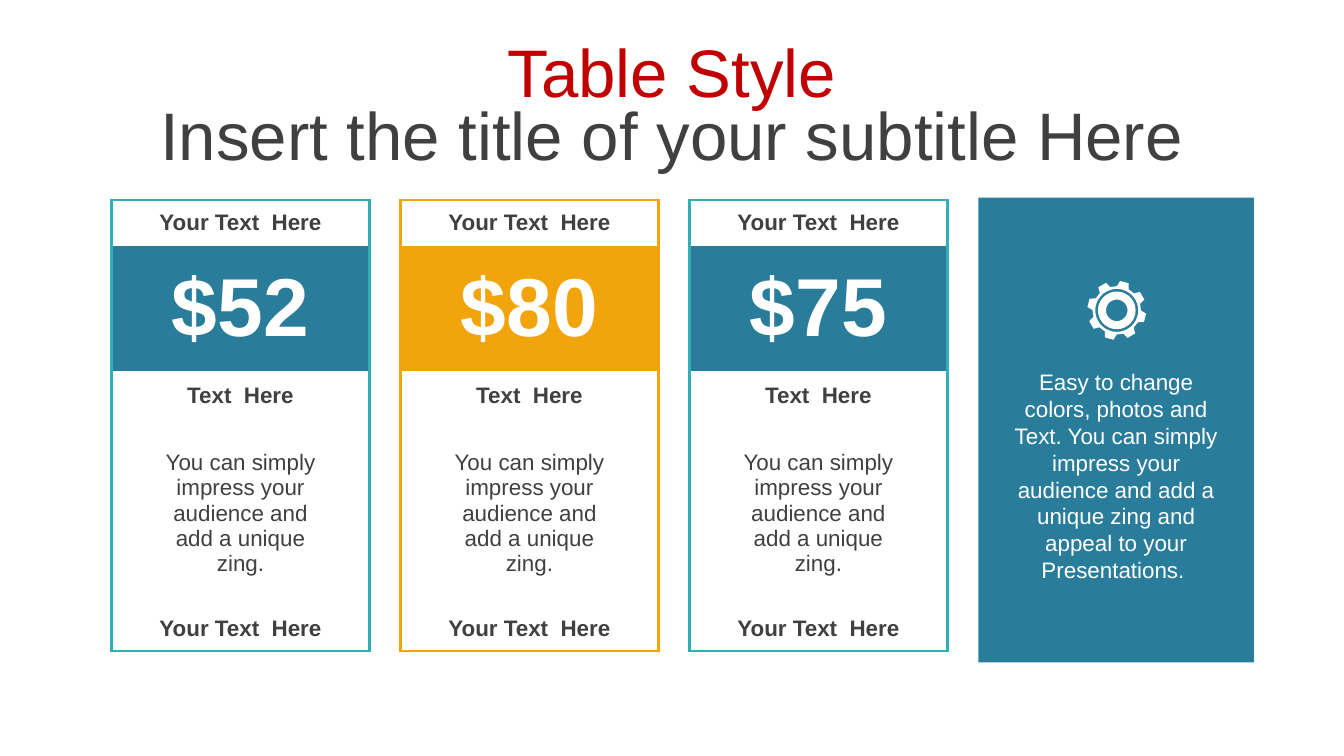
from dataclasses import dataclass
from math import cos, radians, sin

from lxml.etree import SubElement
from pptx import Presentation
from pptx.dml.color import RGBColor
from pptx.enum.shapes import MSO_SHAPE
from pptx.enum.text import MSO_ANCHOR, MSO_AUTO_SIZE, PP_ALIGN
from pptx.oxml.ns import qn
from pptx.util import Inches, Pt

COLORS = {
    "red": "C00000",
    "text": "404040",
    "teal": "32AEB8",
    "blue": "297D9B",
    "orange": "F2A40D",
    "white": "FFFFFF",
}
FONT = "Arial"
COLUMN_WIDTHS = (0.25, 1.42, 0.25)
ROW_HEIGHTS = (0.34, 0.93, 0.34, 0.34, 0.34, 0.63, 0.34)
FULL_WIDTH_ROWS = (0, 1, 6)
BORDER_WIDTH = Pt(1.5)
EMPTY_CELL_SIZE = 17.5
TABLE_TOP, TABLE_HEIGHT = 1.49, 3.44
TABLE_LEFT, TABLE_STEP = 0.83, 2.15


@dataclass
class PriceCard:
    price: str
    band: str
    border: str


@dataclass
class CellText:
    row: int
    column: int
    text: str
    size: int = 12
    bold: bool = True
    color: str = "text"


CARDS = [
    PriceCard("$52", "blue", "teal"),
    PriceCard("$80", "orange", "orange"),
    PriceCard("$75", "blue", "teal"),
]


def rgb(name: str) -> RGBColor:
    return RGBColor.from_string(COLORS[name])


def format_paragraph(paragraph, size: int, color: str, bold: bool = False) -> None:
    paragraph.alignment = PP_ALIGN.CENTER
    paragraph.font.name = FONT
    paragraph.font.size = Pt(size)
    paragraph.font.bold = bold
    paragraph.font.color.rgb = rgb(color)


def fill_heading(placeholder, text: str, top: float, height: float, color: str) -> None:
    placeholder.left, placeholder.top = Inches(0), Inches(top)
    placeholder.width, placeholder.height = Inches(10), Inches(height)
    frame = placeholder.text_frame
    frame.text = text
    frame.auto_size = MSO_AUTO_SIZE.NONE
    frame.vertical_anchor = MSO_ANCHOR.MIDDLE
    paragraph = frame.paragraphs[0]
    format_paragraph(paragraph, 36, color)
    paragraph.space_before = Pt(7.2)
    properties = paragraph._p.get_or_add_pPr()
    properties.set("marL", "0")
    properties.set("indent", "0")
    bullet = SubElement(properties, qn("a:buNone"))
    properties.find(qn("a:defRPr")).addprevious(bullet)


def set_borders(cell, row: int, column: int, color: str) -> None:
    """Draw only the edges that lie on the outside of the card."""
    edges = {
        "a:lnL": column == 0,
        "a:lnR": column == 2 or row in FULL_WIDTH_ROWS,
        "a:lnT": row == 0,
        "a:lnB": row == len(ROW_HEIGHTS) - 1,
    }
    properties = cell._tc.get_or_add_tcPr()
    for tag, visible in edges.items():
        line = SubElement(properties, qn(tag), w=str(BORDER_WIDTH if visible else 0))
        if visible:
            fill = SubElement(line, qn("a:solidFill"))
            SubElement(fill, qn("a:srgbClr"), val=COLORS[color])
        else:
            SubElement(line, qn("a:noFill"))


def set_empty_line_font(cell) -> None:
    """Size the empty line, which decides how far the row grows."""
    paragraph = cell.text_frame.paragraphs[0]
    end = SubElement(paragraph._p, qn("a:endParaRPr"), sz=str(int(EMPTY_CELL_SIZE * 100)))
    SubElement(end, qn("a:latin"), typeface=FONT)


def add_card(slide, card: PriceCard, left: float) -> None:
    table = slide.shapes.add_table(
        len(ROW_HEIGHTS), len(COLUMN_WIDTHS), Inches(left), Inches(TABLE_TOP),
        Inches(sum(COLUMN_WIDTHS)), Inches(TABLE_HEIGHT),
    ).table
    table.first_row = table.horz_banding = False
    for column, width in zip(table.columns, COLUMN_WIDTHS):
        column.width = Inches(width)
    for row, height in zip(table.rows, ROW_HEIGHTS):
        row.height = Inches(height)

    texts = [
        CellText(0, 0, "Your Text  Here"),
        CellText(1, 0, card.price, size=44, color="white"),
        CellText(2, 1, "Text  Here"),
        CellText(3, 1, "You can simply impress your audience and add a unique zing.", bold=False),
        CellText(6, 0, "Your Text  Here"),
    ]
    filled = {(item.row, item.column) for item in texts}
    for row in range(len(ROW_HEIGHTS)):
        for column in range(len(COLUMN_WIDTHS)):
            cell = table.cell(row, column)
            set_borders(cell, row, column, card.border)
            cell.fill.solid()
            cell.fill.fore_color.rgb = rgb(card.band if row == 1 else "white")
            if row not in FULL_WIDTH_ROWS and (row, column) not in filled:
                set_empty_line_font(cell)

    for row in FULL_WIDTH_ROWS:
        table.cell(row, 0).merge(table.cell(row, 2))
    table.cell(3, 1).merge(table.cell(5, 1))

    for item in texts:
        cell = table.cell(item.row, item.column)
        cell.text = item.text
        cell.vertical_anchor = MSO_ANCHOR.MIDDLE
        format_paragraph(cell.text_frame.paragraphs[0], item.size, item.color, item.bold)


def style_shape(shape, color: str) -> None:
    shape.shadow.inherit = False
    shape.fill.solid()
    shape.fill.fore_color.rgb = rgb(color)
    shape.line.fill.background()


def add_gear(slide, center_x: float, center_y: float) -> None:
    """Draw an eight-toothed gear with a ring cut out around its hub."""
    def point(angle: float, radius: float) -> tuple[int, int]:
        return (
            Inches(center_x + radius * cos(radians(angle))),
            Inches(center_y + radius * sin(radians(angle))),
        )

    tooth = ((-14.5, 0.18), (-8.5, 0.22), (8.5, 0.22), (14.5, 0.18))
    contours = [[
        point(15 + 45 * index + offset, radius)
        for index in range(8) for offset, radius in tooth
    ]]
    for radius in (0.16, 0.14, 0.08):
        contours.append([point(angle, radius) for angle in range(0, 360, 10)])

    builder = slide.shapes.build_freeform(*contours[0][0])
    builder.add_line_segments(contours[0][1:], close=True)
    for contour in contours[1:]:
        builder.move_to(*contour[0])
        builder.add_line_segments(contour[1:], close=True)
    style_shape(builder.convert_to_shape(), "white")


def add_side_panel(slide) -> None:
    panel = slide.shapes.add_shape(
        MSO_SHAPE.RECTANGLE, Inches(7.28), Inches(1.47), Inches(2.05), Inches(3.46)
    )
    style_shape(panel, "blue")
    add_gear(slide, 8.31, 2.31)
    text_box = slide.shapes.add_textbox(Inches(7.4), Inches(2.69), Inches(1.81), Inches(1.72))
    frame = text_box.text_frame
    frame.word_wrap = True
    frame.auto_size = MSO_AUTO_SIZE.SHAPE_TO_FIT_TEXT
    frame.text = (
        "Easy to change colors, photos and Text. You can simply impress your "
        "audience and add a unique zing and appeal to your Presentations. "
    )
    format_paragraph(frame.paragraphs[0], 12, "white")


def main() -> None:
    presentation = Presentation()
    presentation.slide_width = Inches(10)
    presentation.slide_height = Inches(10 * 9 / 16)
    slide = presentation.slides.add_slide(presentation.slide_layouts[1])
    title, subtitle = slide.placeholders
    fill_heading(title, "Table Style", 0.21, 0.63, "red")
    fill_heading(subtitle, "Insert the title of your subtitle Here", 0.84, 0.31, "text")
    for index, card in enumerate(CARDS):
        add_card(slide, card, TABLE_LEFT + index * TABLE_STEP)
    add_side_panel(slide)
    presentation.save("out.pptx")


if __name__ == "__main__":
    main()
